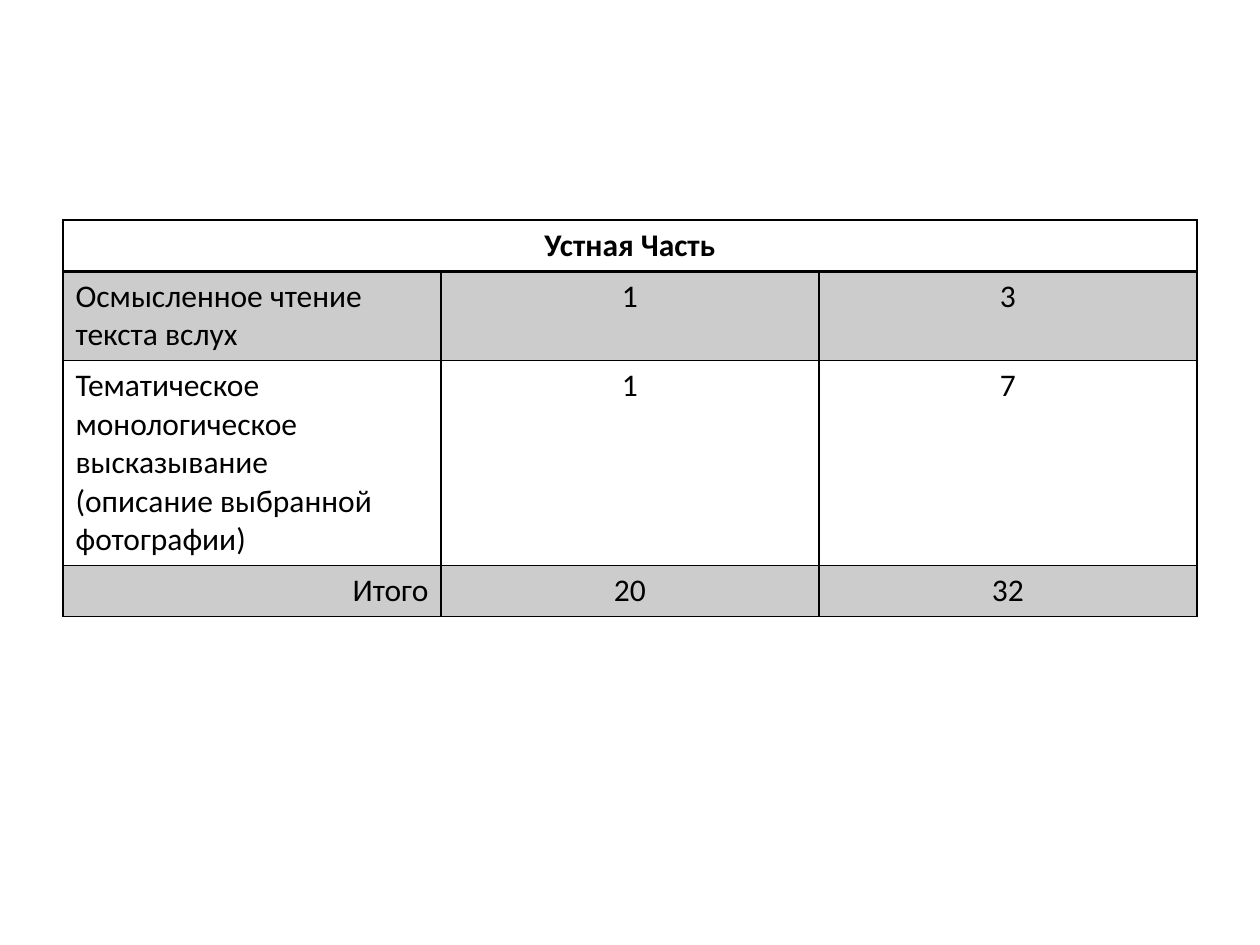
from lxml.etree import SubElement
from pptx import Presentation
from pptx.dml.color import RGBColor
from pptx.enum.text import PP_ALIGN
from pptx.oxml import parse_xml
from pptx.oxml.ns import nsdecls, qn
from pptx.util import Emu, Inches, Pt

PX = Inches(1) // 126
COLORS = {"ink": "000000"}
BAND_OPACITY = 20
LEFT, CENTER, RIGHT = PP_ALIGN.LEFT, PP_ALIGN.CENTER, PP_ALIGN.RIGHT

HEADING = "Устная Часть"
SCORES = [
    (["Осмысленное чтение текста вслух"], "1", "3"),
    (["Тематическое монологическое высказывание",
      "(описание выбранной фотографии)"], "1", "7"),
    (["Итого"], "20", "32"),
]


def px(count):
    return Emu(count * PX)


def write(frame, lines, font="Calibri", size=18, color="ink", bold=False, align=LEFT):
    for index, line in enumerate(lines):
        para = frame.paragraphs[0] if index == 0 else frame.add_paragraph()
        para.alignment = align
        span = para.add_run()
        span.text = line
        span.font.name = font
        span.font.size = Pt(size)
        span.font.bold = bold
        span.font.color.rgb = RGBColor.from_string(COLORS[color])


class ScorePage:
    """Holds the current slide and the style of its table."""

    def __init__(self, deck):
        self.page = deck.slides.add_slide(deck.slide_layouts[6])

    def table(self, left, top, width, height, rows, columns, row_height):
        frame = self.page.shapes.add_table(
            rows, columns, px(left), px(top), px(width), px(height))
        for row in frame.table.rows:
            row.height = px(row_height)
        frame.height = px(height)
        return frame.table

    def cell(self, cell, lines, banded=False, bottom=1, **style):
        write(cell.text_frame, lines, **style)
        if banded:
            cell.fill.solid()
            cell.fill.fore_color.rgb = RGBColor.from_string(COLORS["ink"])
            color = cell.fill._xPr.find(".//" + qn("a:srgbClr"))
            SubElement(color, qn("a:alpha"), val=str(BAND_OPACITY * 1000))
        else:
            cell.fill.background()
        self.borders(cell, L=1, R=1, T=1, B=bottom)

    def borders(self, cell, **widths):
        """Put the border lines ahead of the fill, as the schema requires."""
        properties = cell._tc.get_or_add_tcPr()
        for index, (side, width) in enumerate(widths.items()):
            properties.insert(index, parse_xml(
                f'<a:ln{side} {nsdecls("a")} w="{Pt(width)}"><a:solidFill>'
                f'<a:srgbClr val="{COLORS["ink"]}"/></a:solidFill></a:ln{side}>'))


def main():
    deck = Presentation()
    deck.slide_width, deck.slide_height = px(1260), px(945)
    page = ScorePage(deck)
    table = page.table(63, 220, 1134, 392, len(SCORES) + 1, 3, 51)

    table.cell(0, 0).merge(table.cell(0, 2))
    for column, lines in enumerate([[HEADING], [], []]):
        page.cell(table.cell(0, column), lines, bottom=2, bold=True, align=CENTER)

    for row, (label, tasks, points) in enumerate(SCORES, start=1):
        label_align = RIGHT if row == len(SCORES) else LEFT
        entries = [(label, label_align), ([tasks], CENTER), ([points], CENTER)]
        for column, (lines, align) in enumerate(entries):
            page.cell(table.cell(row, column), lines, banded=row % 2 == 1, align=align)
        if row == 1:
            for column in range(3):
                top_line = table.cell(row, column)._tc.tcPr.find(qn("a:lnT"))
                top_line.set("w", str(Pt(2)))

    deck.save("out.pptx")


if __name__ == "__main__":
    main()
